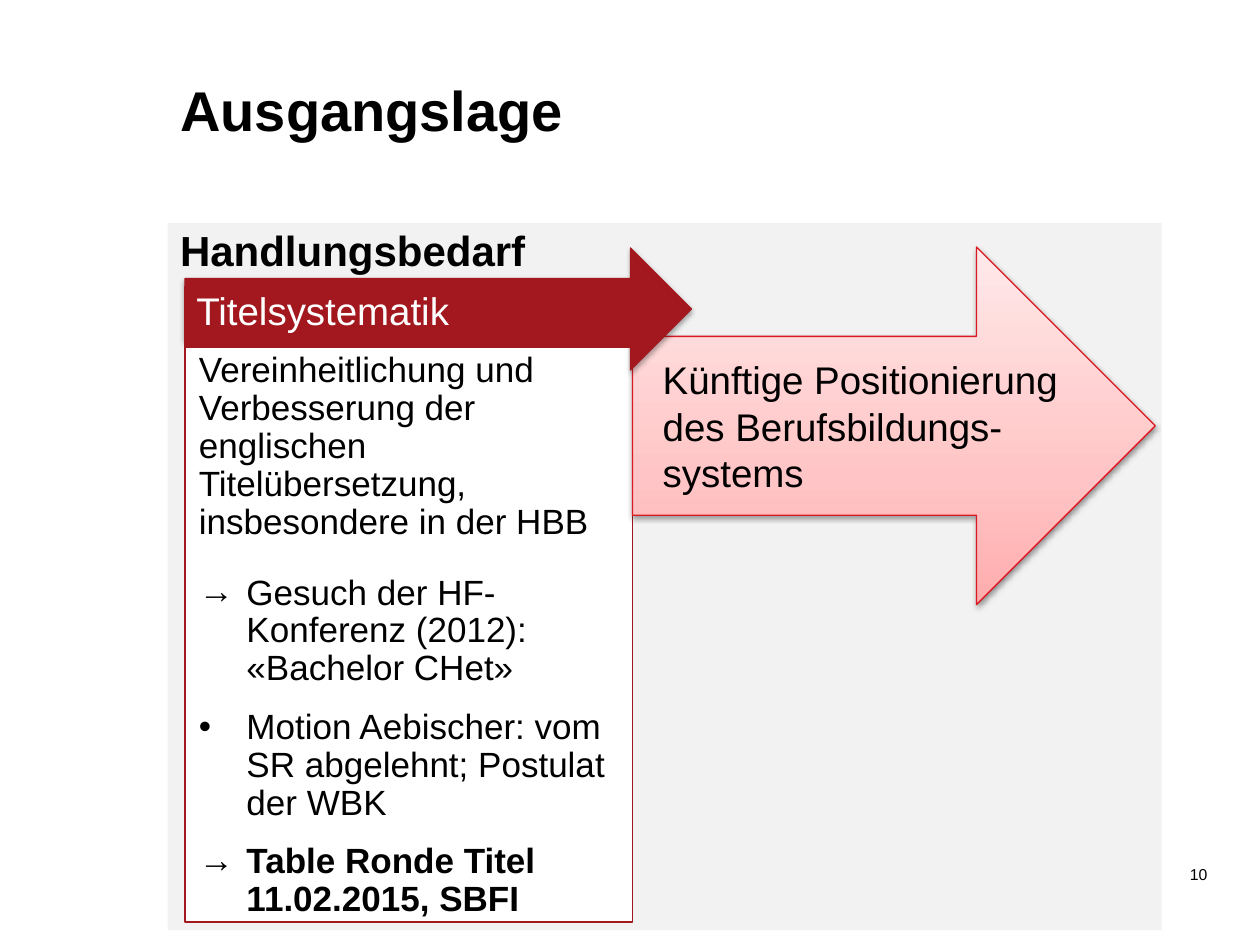
import copy
from dataclasses import dataclass

import pptx
import pptx.dml.color
import pptx.enum.shapes
import pptx.enum.text
import pptx.oxml
import pptx.oxml.ns
import pptx.util
from pptx.util import Cm

Pt = pptx.util.Pt
RGB = pptx.dml.color.RGBColor.from_string
SHAPE = pptx.enum.shapes.MSO_SHAPE
ANCHOR = pptx.enum.text.MSO_ANCHOR
ALIGN = pptx.enum.text.PP_ALIGN


@dataclass
class Theme:
    font: str = "Arial"
    black: str = "000000"
    white: str = "FFFFFF"
    panel: str = "F2F2F2"
    dark_red: str = "A3171E"
    red: str = "DA1A23"
    gradient: tuple = ((0, "FFACAD"), (0.35, "FFC4C5"), (1, "FFE9E9"))
    title_size: int = 32
    heading_size: int = 24
    label_size: int = 22
    body_size: int = 20
    number_size: int = 9


theme = Theme()


def write(paragraph, text, size, color=theme.black, bold=False, **spacing):
    """Fill a paragraph and format its runs."""
    paragraph.text = text
    for name, value in {"alignment": ALIGN.LEFT, **spacing}.items():
        setattr(paragraph, name, value)
    for run in paragraph.runs:
        run.font.color.rgb = RGB(color)
        for name, value in {"name": theme.font, "size": Pt(size), "bold": bold}.items():
            setattr(run.font, name, value)


def add_block(kind, box, fill=None, line=None, shadow_alpha=None):
    """Add a preset shape with plain fill, thin outline and optional soft shadow."""
    shape = slide.shapes.add_shape(kind, *map(Cm, box))
    if fill:
        shape.fill.solid()
        shape.fill.fore_color.rgb = RGB(fill)
    if line:
        shape.line.color.rgb = RGB(line)
        shape.line.width = Pt(0.75)
    else:
        shape.line.fill.background()
    shape.shadow.inherit = False
    if shadow_alpha:
        effects = shape._element.spPr.find(pptx.oxml.ns.qn("a:effectLst"))
        effects.append(pptx.oxml.parse_xml(
            f'<a:outerShdw {pptx.oxml.ns.nsdecls("a")} blurRad="{Pt(3.1)}" dist="{Pt(1.7)}"'
            ' dir="5400000" rotWithShape="0"><a:srgbClr val="000000">'
            f'<a:alpha val="{shadow_alpha * 1000}"/></a:srgbClr></a:outerShdw>'))
    return shape


presentation = pptx.Presentation()
presentation.slide_width, presentation.slide_height = Cm(25.4), Cm(19.05)
slide = presentation.slides.add_slide(presentation.slide_layouts[5])

# Title
title = slide.shapes.title
title_format = {"left": Cm(3.38), "top": Cm(1.4), "width": Cm(17.48), "height": Cm(1.98)}
for name, value in title_format.items():
    setattr(title, name, value)
title.text_frame.vertical_anchor = ANCHOR.TOP
title.text_frame.auto_size = pptx.enum.text.MSO_AUTO_SIZE.NONE
write(title.text_frame.paragraphs[0], "Ausgangslage", theme.title_size, bold=True)

# Grey panel with heading
panel = add_block(SHAPE.RECTANGLE, (3.38, 4.5, 20.04, 14.25), theme.panel)
panel.text_frame.vertical_anchor = ANCHOR.TOP
write(panel.text_frame.paragraphs[0], "Handlungsbedarf", theme.heading_size,
      bold=True, line_spacing=Pt(26))

# Slide number
number = slide.shapes.add_textbox(Cm(18.39), Cm(17.27), Cm(6.2), Cm(1.02))
number.text_frame.word_wrap = True
write(number.text_frame.paragraphs[0], "10", theme.number_size,
      alignment=ALIGN.RIGHT, line_spacing=Pt(12))

# White frame and gradient arrow
add_block(SHAPE.RECTANGLE, (3.73, 6.88, 9.02, 11.71), theme.white, theme.dark_red)
future_arrow = add_block(SHAPE.RIGHT_ARROW, (12.75, 4.98, 10.54, 7.21),
                         line=theme.red, shadow_alpha=38)
future_arrow.fill.gradient()
future_arrow.fill.gradient_angle = 90
stop_list = future_arrow._element.spPr.find(".//" + pptx.oxml.ns.qn("a:gsLst"))
stop_list.append(copy.deepcopy(stop_list[-1]))
for stop, (position, color) in zip(future_arrow.fill.gradient_stops, theme.gradient):
    stop.position = position
    stop.color.rgb = RGB(color)

# Points in the frame: text, bullet, hanging, bold, space before, space after
points = [
    ("Vereinheitlichung und Verbesserung der englischen Titelübersetzung, "
     "insbesondere in der HBB", None, False, False, 0, 7),
    ("Gesuch der HF-Konferenz (2012):\v«Bachelor CHet»", "→", True, False, 12, 0),
    ("Motion Aebischer: vom SR abgelehnt; Postulat der WBK", "•", True, False, 12, 0),
    ("Table Ronde Titel", "→", True, True, 12, 0),
    ("11.02.2015, SBFI", None, True, True, 0, 0),
]
details = slide.shapes.add_textbox(Cm(3.78), Cm(6.88), Cm(8.92), Cm(7.62)).text_frame
details.word_wrap = True
for side in ("left", "top", "right", "bottom"):
    setattr(details, f"margin_{side}", Cm(0.23))
for index, (text, bullet, hanging, bold, before, after) in enumerate(points):
    paragraph = details.add_paragraph() if index else details.paragraphs[0]
    properties = paragraph._p.get_or_add_pPr()
    if hanging:
        properties.set("marL", str(Cm(0.96)))
    if bullet:
        properties.set("indent", str(-Cm(0.96)))
        for xml in (f'buFont {pptx.oxml.ns.nsdecls("a")} typeface="{theme.font}"',
                    f'buChar {pptx.oxml.ns.nsdecls("a")} char="{bullet}"'):
            properties.append(pptx.oxml.parse_xml(f"<a:{xml}/>"))
    write(paragraph, text, theme.body_size, bold=bold, line_spacing=0.9,
          space_before=Pt(before), space_after=Pt(after))

# Dark arrow with its label
add_block(SHAPE.RIGHT_ARROW, (3.73, 5, 10.21, 2.46), theme.dark_red, theme.dark_red, 35)
label = add_block(SHAPE.RECTANGLE, (3.73, 5.77, 9.4, 1.24), theme.dark_red, theme.dark_red)
label_format = {"margin_left": Cm(0.23), "margin_top": Cm(0.23), "margin_right": Cm(0.71),
                "margin_bottom": Cm(0.38), "vertical_anchor": ANCHOR.MIDDLE}
for name, value in label_format.items():
    setattr(label.text_frame, name, value)
write(label.text_frame.paragraphs[0], "Titelsystematik", theme.label_size,
      theme.white, line_spacing=0.9)

# Text on the gradient arrow
future = slide.shapes.add_textbox(Cm(13.11), Cm(7.06), Cm(9.19), Cm(3.07))
future.text_frame.word_wrap = True
write(future.text_frame.paragraphs[0],
      "Künftige Positionierung des Berufsbildungs-systems", theme.label_size)

presentation.save("out.pptx")
